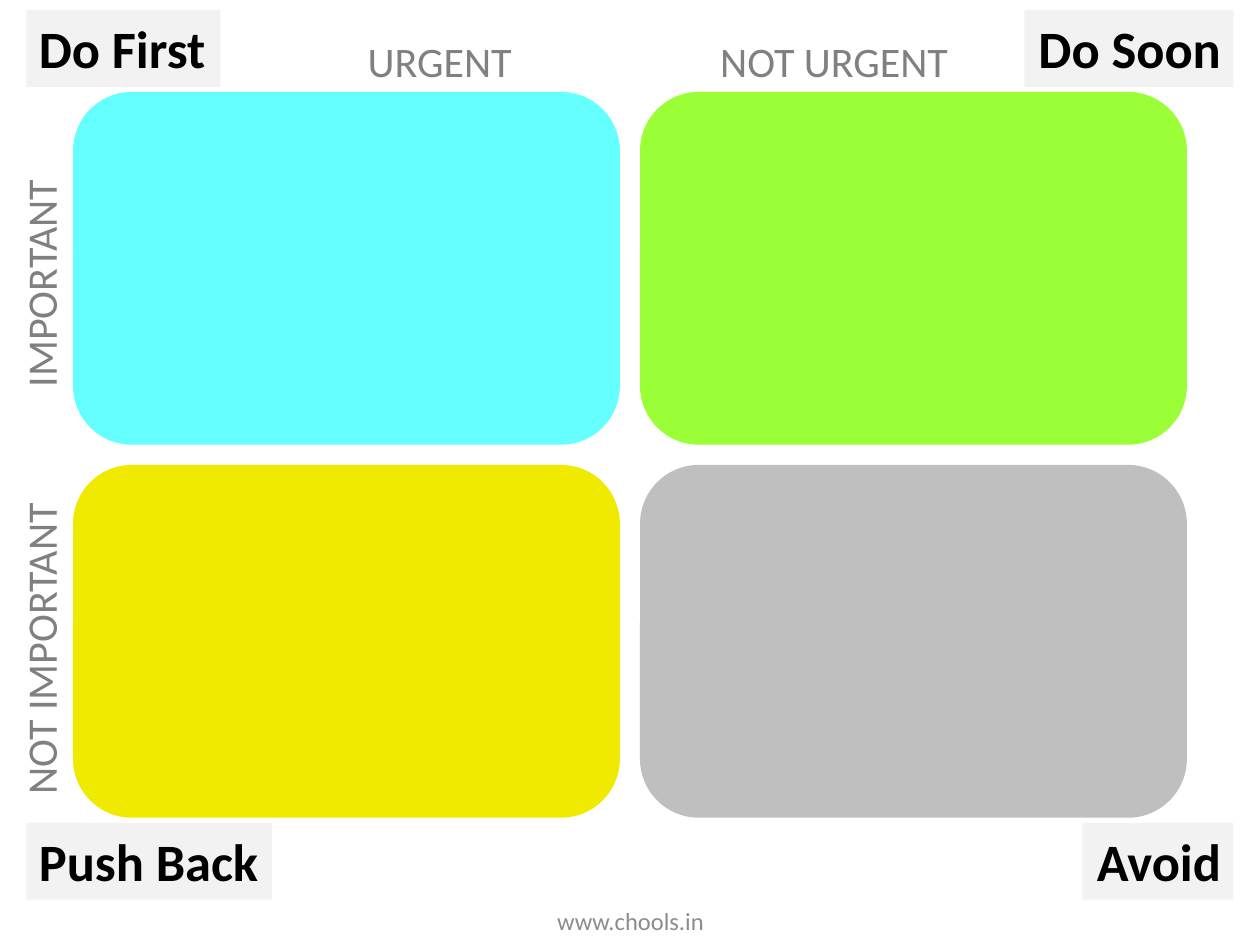
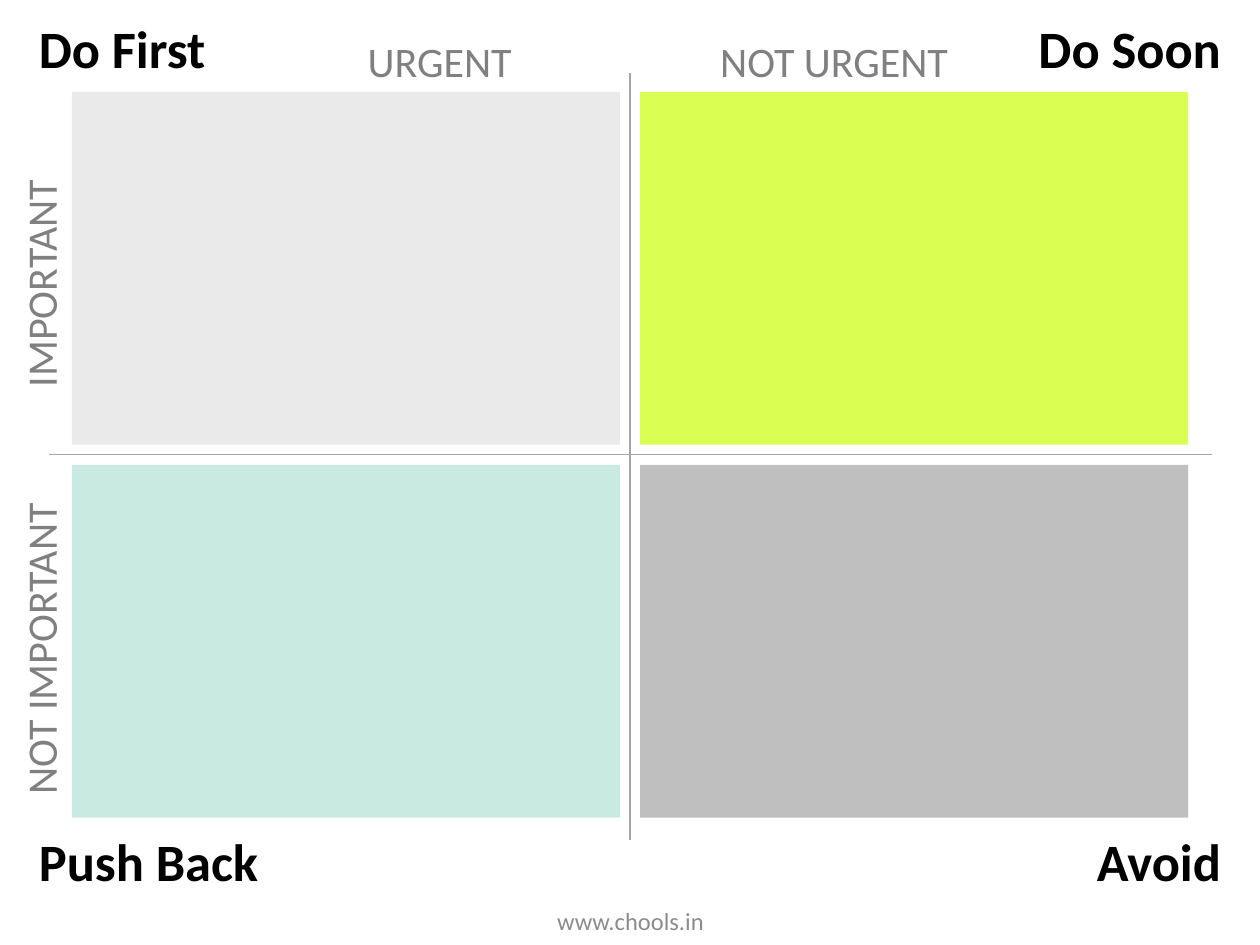
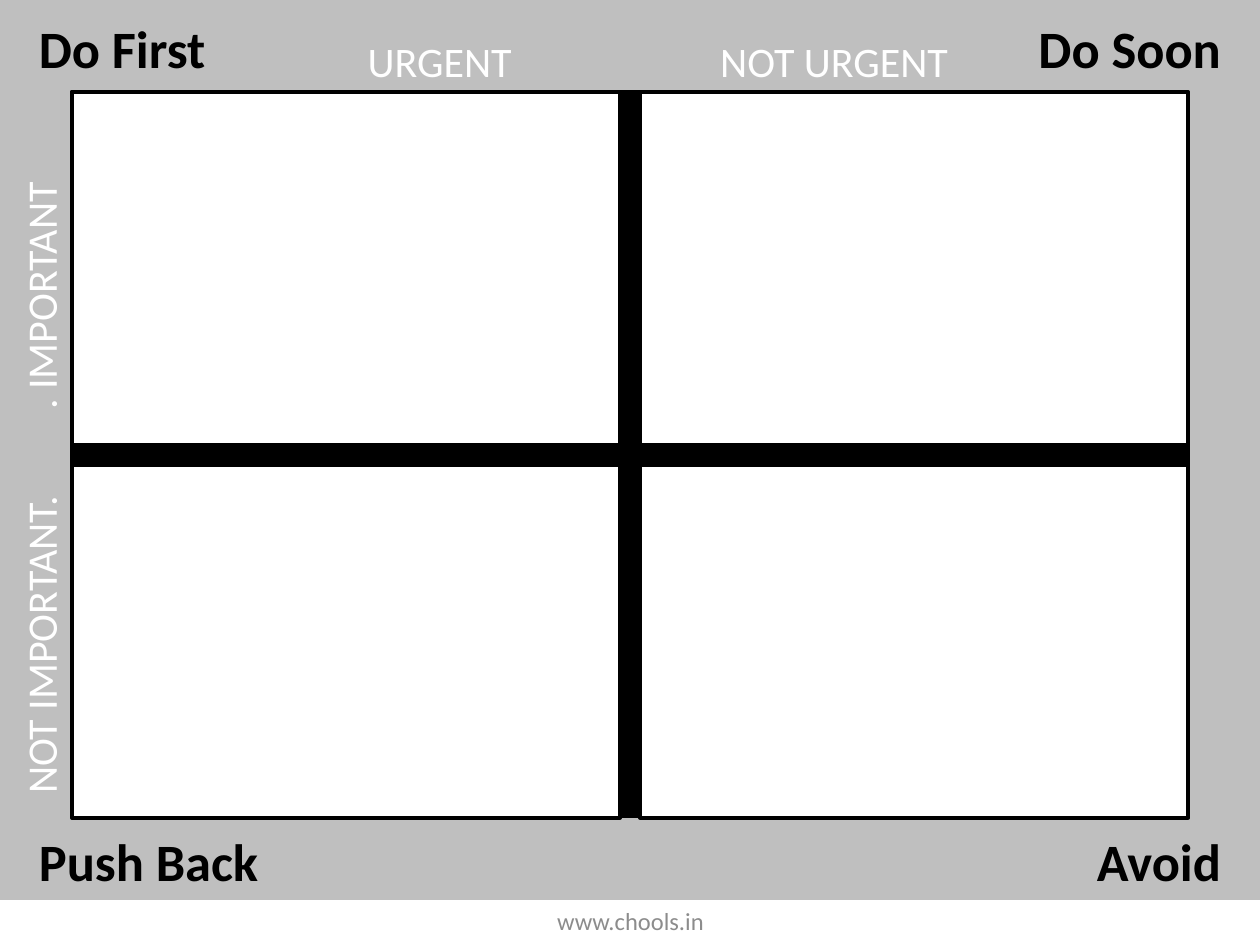
from dataclasses import dataclass
from typing import Optional

from lxml.etree import SubElement
from pptx import Presentation
from pptx.dml.color import RGBColor
from pptx.enum.shapes import MSO_CONNECTOR, MSO_SHAPE
from pptx.enum.text import MSO_ANCHOR, PP_ALIGN
from pptx.oxml.ns import qn
from pptx.util import Inches, Pt


@dataclass(frozen=True)
class Theme:
    font: str = "Calibri"
    corner_size: int = 30
    axis_size: int = 24
    footer_size: int = 14
    black: str = "000000"
    white: str = "FFFFFF"
    axis_gray: str = "808080"
    footer_gray: str = "8C8C8C"
    line_gray: str = "A6A6A6"
    mid_gray: str = "BFBFBF"
    tag_gray: str = "F2F2F2"


THEME = Theme()


@dataclass(frozen=True)
class Frame:
    left: float
    top: float
    width: float
    height: float

    def lengths(self) -> tuple:
        return tuple(map(Inches, (self.left, self.top, self.width, self.height)))


@dataclass(frozen=True)
class TextStyle:
    size: int
    color: str
    bold: bool = False
    align: PP_ALIGN = PP_ALIGN.CENTER
    anchor: MSO_ANCHOR = MSO_ANCHOR.TOP
    wrap: bool = False


@dataclass(frozen=True)
class AxisLabel:
    text: str
    center_x: float
    center_y: float
    width: float
    rotation: int = 0


@dataclass(frozen=True)
class Matrix:
    """One look of the priority matrix; colours run row by row."""
    colors: tuple
    cell_width: float = 4.35
    rounding: float = 0
    outline: Optional[str] = None
    tag_fill: Optional[str] = None
    axis_color: str = THEME.axis_gray
    cross: bool = False
    backdrop: bool = False
    dotted: bool = False


# Grid shared by every matrix
CENTER_X, CENTER_Y = 5, 3.61
GAP, CELL_HEIGHT = 0.16, 2.8
AXIS_HEIGHT = 0.5

# Corner tags: text, width, column, row
EDGE, TAG_HEIGHT = 0.21, 0.61
TAG_TOPS = (0.08, 6.53)
TAGS = (("Do First", 1.54, 0, 0), ("Do Soon", 1.66, 1, 0),
        ("Push Back", 1.95, 0, 1), ("Avoid", 1.2, 1, 1))

# Axis labels, each wide enough for a single line
COLUMN_LABELS = (AxisLabel("URGENT", 3.49, 0.48, 1.6),
                 AxisLabel("NOT URGENT", 6.62, 0.48, 2.4))
ROW_LABELS = (AxisLabel("IMPORTANT", 0.32, 2.25, 2.2, 270),
              AxisLabel("NOT IMPORTANT", 0.32, 5.15, 2.9, 270))
DOTTED_ROW_LABELS = (AxisLabel(". IMPORTANT", 0.32, 2.35, 2.4, 270),
                     AxisLabel("NOT IMPORTANT.", 0.32, 5.12, 2.9, 270))

MATRICES = (
    Matrix(("66FFFF", "9BFF37", "F0EA00", THEME.mid_gray), cell_width=4.34,
           rounding=0.1667, tag_fill=THEME.tag_gray),
    Matrix(("EAEAEA", "DAFF53", "C9EAE0", THEME.mid_gray), cross=True),
    Matrix((THEME.white,) * 4, outline=THEME.black, axis_color=THEME.white,
           backdrop=True, dotted=True),
)


def set_all(target, values: dict) -> None:
    for name, value in values.items():
        setattr(target, name, value)


def paint(shape, fill: str, outline: Optional[str] = None, weight: float = 2) -> None:
    shape.shadow.inherit = False
    shape.fill.solid()
    shape.fill.fore_color.rgb = RGBColor.from_string(fill)
    if outline:
        shape.line.color.rgb = RGBColor.from_string(outline)
        shape.line.width = Pt(weight)
    else:
        shape.line.fill.background()


def add_text(page, frame: Frame, text: str, style: TextStyle):
    box = page.shapes.add_textbox(*frame.lengths())
    set_all(box.text_frame, {"word_wrap": style.wrap, "vertical_anchor": style.anchor})
    para = box.text_frame.paragraphs[0]
    para.alignment = style.align
    span = para.add_run()
    span.text = text
    set_all(span.font, {"name": THEME.font, "size": Pt(style.size), "bold": style.bold})
    span.font.color.rgb = RGBColor.from_string(style.color)
    return box


def add_backdrop(page) -> None:
    for frame, color in ((Frame(0, 0, 10, 7.13), THEME.mid_gray),
                         (Frame(0.57, 0.73, 8.86, 5.75), THEME.black)):
        panel = page.shapes.add_shape(MSO_SHAPE.RECTANGLE, *frame.lengths())
        paint(panel, color, color)


def add_quadrants(page, matrix: Matrix) -> None:
    lefts = (CENTER_X - GAP / 2 - matrix.cell_width, CENTER_X + GAP / 2)
    tops = (CENTER_Y - GAP / 2 - CELL_HEIGHT, CENTER_Y + GAP / 2)
    for index, color in enumerate(matrix.colors):
        row, column = divmod(index, 2)
        frame = Frame(lefts[column], tops[row], matrix.cell_width, CELL_HEIGHT)
        quadrant = page.shapes.add_shape(MSO_SHAPE.ROUNDED_RECTANGLE, *frame.lengths())
        quadrant.adjustments[0] = matrix.rounding
        paint(quadrant, color, matrix.outline, 2.25)


def add_cross(page) -> None:
    for ends in ((0.39, CENTER_Y, 9.62, CENTER_Y), (CENTER_X, 6.67, CENTER_X, 0.58)):
        line = page.shapes.add_connector(MSO_CONNECTOR.STRAIGHT, *map(Inches, ends))
        line.line.color.rgb = RGBColor.from_string(THEME.line_gray)
        line.line.width = Pt(0.75)
        SubElement(line._element.spPr, qn("a:effectLst"))


def add_tags(page, fill: Optional[str]) -> None:
    for text, width, column, row in TAGS:
        left = 10 - EDGE - width if column else EDGE
        align = PP_ALIGN.RIGHT if column else PP_ALIGN.LEFT
        style = TextStyle(THEME.corner_size, THEME.black, bold=True, align=align)
        tag = add_text(page, Frame(left, TAG_TOPS[row], width, TAG_HEIGHT), text, style)
        if fill:
            paint(tag, fill)


def add_axis_labels(page, matrix: Matrix) -> None:
    style = TextStyle(THEME.axis_size, matrix.axis_color)
    row_labels = DOTTED_ROW_LABELS if matrix.dotted else ROW_LABELS
    for label in COLUMN_LABELS + row_labels:
        frame = Frame(label.center_x - label.width / 2,
                      label.center_y - AXIS_HEIGHT / 2, label.width, AXIS_HEIGHT)
        add_text(page, frame, label.text, style).rotation = label.rotation


def add_footer(page) -> None:
    style = TextStyle(THEME.footer_size, THEME.footer_gray,
                      anchor=MSO_ANCHOR.MIDDLE, wrap=True)
    add_text(page, Frame(3.42, 7.11, 3.17, 0.4), "www.chools.in", style)


def build_page(deck, matrix: Matrix) -> None:
    page = deck.slides.add_slide(deck.slide_layouts.get_by_name("Blank"))
    if matrix.backdrop:
        add_backdrop(page)
    add_quadrants(page, matrix)
    if matrix.cross:
        add_cross(page)
    add_tags(page, matrix.tag_fill)
    add_axis_labels(page, matrix)
    add_footer(page)


def main() -> None:
    deck = Presentation()
    set_all(deck, {"slide_width": Inches(10), "slide_height": Inches(7.5)})
    for matrix in MATRICES:
        build_page(deck, matrix)
    deck.save("out.pptx")


if __name__ == "__main__":
    main()
